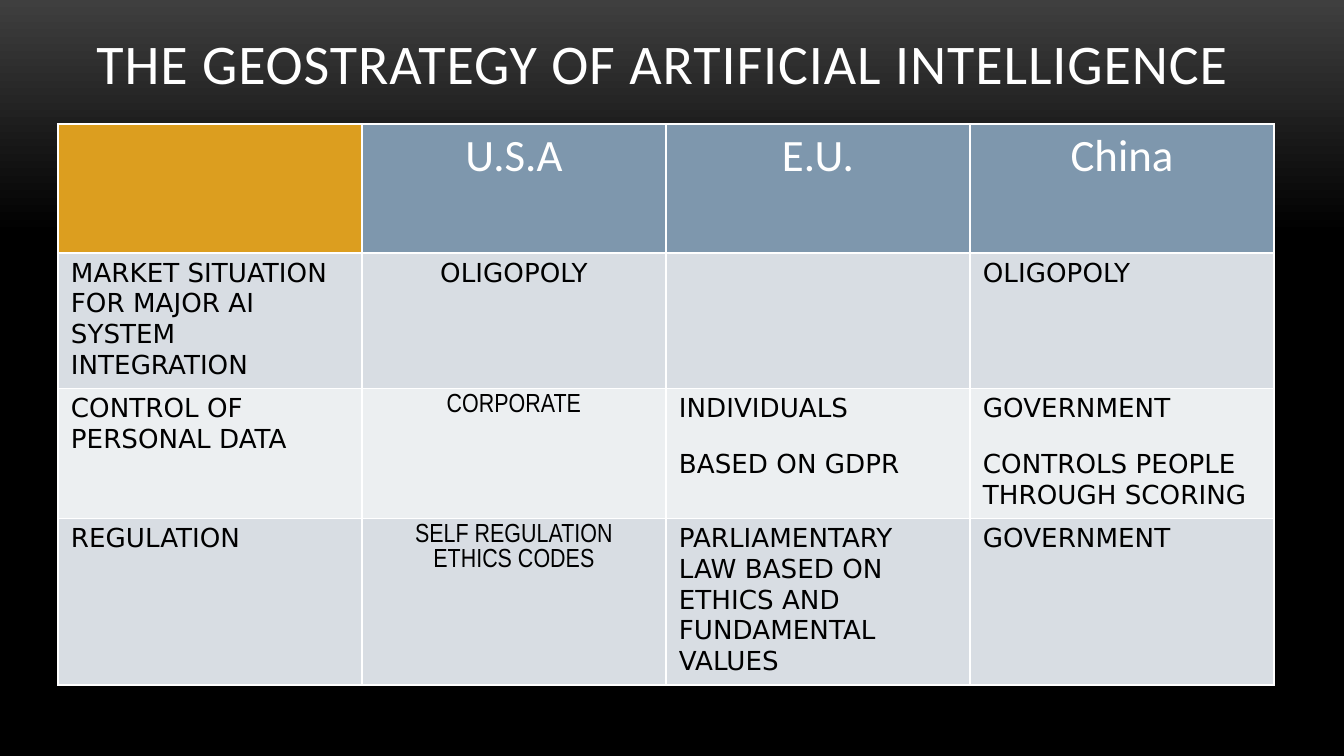
from dataclasses import dataclass

from lxml.etree import SubElement
from pptx import Presentation
from pptx.dml.color import RGBColor
from pptx.enum.text import MSO_ANCHOR, PP_ALIGN
from pptx.oxml import parse_xml
from pptx.oxml.ns import nsdecls
from pptx.util import Emu, Pt

SCALE = 914400 / 134.4
WHITE, BLACK = "FFFFFF", "000000"
GOLD, BLUE, DARK, LIGHT = "DC9E1F", "7E97AD", "D8DDE3", "ECEFF1"
SANS, NARROW = "DejaVu Sans", "Arial Narrow"
GAP = 13.5


@dataclass
class Style:
    font: str
    size: int
    color: str
    center: bool = False


@dataclass
class Entry:
    lines: tuple[str, ...]
    style: Style


@dataclass
class Row:
    height: int
    fills: tuple[str, ...]
    cells: tuple[Entry, ...]


def px(n: int) -> Emu:
    return Emu(round(n * SCALE))


def rgb(code: str) -> RGBColor:
    return RGBColor.from_string(code)


def write(frame, entry: Entry) -> list:
    """Fill a text frame, one paragraph a line, and return its runs."""
    runs = []
    style = entry.style
    for i, line in enumerate(entry.lines):
        para = frame.paragraphs[0] if i == 0 else frame.add_paragraph()
        para.alignment = PP_ALIGN.CENTER if style.center else PP_ALIGN.LEFT
        if i:
            para.space_before = Pt(GAP)
        run = para.add_run()
        run.text = line
        run.font.name = style.font
        run.font.size = Pt(style.size)
        run.font.color.rgb = rgb(style.color)
        runs.append(run)
    return runs


def border(cell, color: str, width: int) -> None:
    """Draw all four sides; lines must precede the cell's fill."""
    props = cell._tc.get_or_add_tcPr()
    for i, side in enumerate("LRTB"):
        line = parse_xml(f'<a:ln{side} {nsdecls("a")} w="{Pt(width)}"/>')
        fill = SubElement(line, line.tag.split("}")[0] + "}solidFill")
        SubElement(fill, line.tag.split("}")[0] + "}srgbClr", val=color)
        props.insert(i, line)


def backdrop(slide) -> None:
    fill = slide.background.fill
    fill.gradient()
    fill.gradient_angle = 270
    for stop, (place, color) in zip(fill.gradient_stops,
                                    ((0, "3F3F3F"), (0.31, BLACK))):
        stop.position = place
        stop.color.rgb = rgb(color)


def title(slide, text: str) -> None:
    frame = slide.shapes.add_textbox(px(58), px(39), px(1210), px(63)).text_frame
    frame.word_wrap = True
    frame.vertical_anchor = MSO_ANCHOR.BOTTOM
    style = Style("Calibri", 30, WHITE, True)
    for run in write(frame, Entry((text,), style)):
        run.font._element.set("spc", "50")


def grid(slide, rows: list[Row]) -> None:
    count = len(rows[0].fills)
    high = sum(row.height for row in rows)
    table = slide.shapes.add_table(len(rows), count, px(58), px(124),
                                   px(304 * count), px(high)).table
    table.first_row = table.horz_banding = False
    for r, row in enumerate(rows):
        table.rows[r].height = px(row.height)
        for c, (fill, entry) in enumerate(zip(row.fills, row.cells)):
            cell = table.cell(r, c)
            cell.margin_left = cell.margin_right = px(13)
            cell.margin_top = cell.margin_bottom = px(5)
            cell.fill.solid()
            cell.fill.fore_color.rgb = rgb(fill)
            border(cell, WHITE, 1)
            write(cell.text_frame, entry)


# Text styles
HEAD = Style("Calibri", 24, WHITE, True)
BODY = Style(SANS, 14, BLACK)
MID = Style(SANS, 14, BLACK, True)
SLIM = Style(NARROW, 14, BLACK, True)


def head(*lines: str) -> Entry:
    return Entry(lines, HEAD)


def body(*lines: str) -> Entry:
    return Entry(lines, BODY)


# Table content
ROWS = [
    Row(129, (GOLD, BLUE, BLUE, BLUE),
        (head(), head("U.S.A"), head("E.U."), head("China"))),
    Row(133, (DARK,) * 4,
        (body("MARKET SITUATION FOR MAJOR AI SYSTEM INTEGRATION"),
         Entry(("OLIGOPOLY",), MID), body(), body("OLIGOPOLY"))),
    Row(130, (LIGHT,) * 4,
        (body("CONTROL OF PERSONAL DATA"),
         Entry(("CORPORATE",), SLIM),
         body("INDIVIDUALS", "BASED ON GDPR"),
         body("GOVERNMENT", "CONTROLS PEOPLE THROUGH SCORING"))),
    Row(164, (DARK,) * 4,
        (body("REGULATION"),
         Entry(("SELF REGULATION ETHICS CODES",), SLIM),
         body("PARLIAMENTARY LAW BASED ON ETHICS AND FUNDAMENTAL VALUES"),
         body("GOVERNMENT"))),
]


def main() -> None:
    deck = Presentation()
    deck.slide_width, deck.slide_height = px(1344), px(756)
    slide = deck.slides.add_slide(deck.slide_layouts[6])
    backdrop(slide)
    title(slide, "THE GEOSTRATEGY OF ARTIFICIAL INTELLIGENCE")
    grid(slide, ROWS)
    deck.save("out.pptx")


if __name__ == "__main__":
    main()
